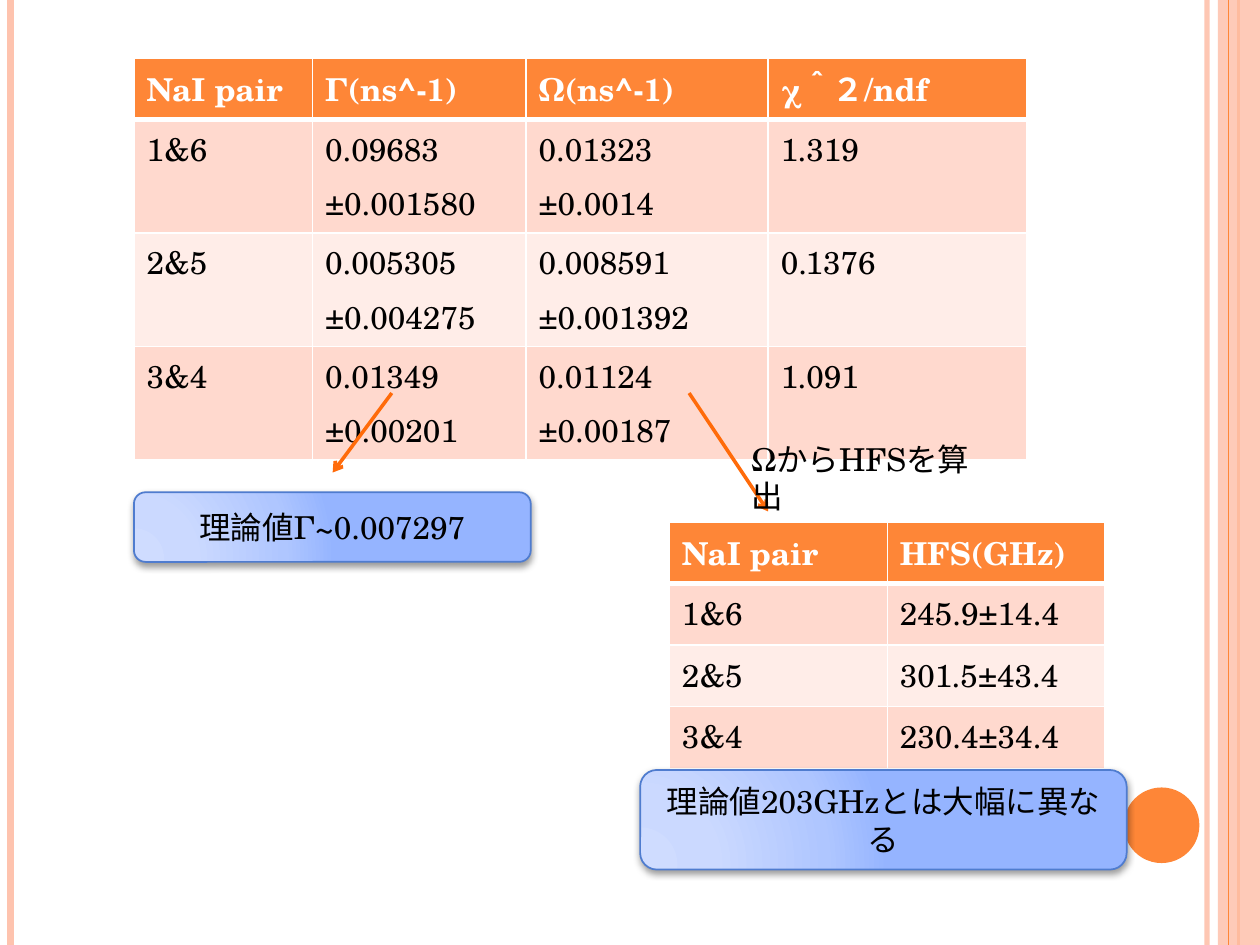
"""Build the slide of fitted decay parameters and the HFS values derived from them."""
from dataclasses import dataclass

from lxml import etree
from pptx import Presentation
from pptx import util as u
from pptx.dml.color import RGBColor
from pptx.enum import shapes, text
from pptx.oxml import parse_xml
from pptx.oxml.ns import qn

Pt = u.Pt
FONT = "TeX Gyre Schola"
NAMESPACE = "http://schemas.openxmlformats.org/drawingml/2006/main"
COLORS = {
    "orange": "FE8637", "peach": "FEC3AE", "arrow": "FF6B0A", "band": "FFD9CE",
    "pale": "FFEDE8", "white": "FFFFFF", "black": "000000", "outline": "4F7CCF",
}
GLOW_STOPS = {0: "CFDCFF", 30: "CBD9FF", 75: "AFC6FF", 100: "95B4FF"}
WIDTH, HEIGHT = 720, 540


@dataclass
class Box:
    left: float
    top: float
    width: float
    height: float

    def lengths(self) -> list:
        return [Pt(value) for value in (self.left, self.top, self.width, self.height)]


@dataclass
class Line:
    start: tuple
    end: tuple
    color: str
    width: float
    arrow: bool = False
    opacity: int = 100


@dataclass
class Grid:
    left: float
    top: float
    columns: list
    heights: list
    rows: list


@dataclass
class Callout:
    box: Box
    words: str


def rgb(name: str) -> RGBColor:
    return RGBColor.from_string(COLORS[name])


def set_opacity(fill_parent, percent: int) -> None:
    color = next(fill_parent.iter(qn("a:srgbClr")))
    etree.SubElement(color, qn("a:alpha")).set("val", str(percent * 1000))


def format_paragraph(paragraph, color: str = "black", bold: bool = False) -> None:
    paragraph.font.name = FONT
    paragraph.font.size = Pt(18)
    paragraph.font.bold = bold
    paragraph.font.color.rgb = rgb(color)


def draw_line(slide, line: Line) -> None:
    ends = [Pt(value) for value in (*line.start, *line.end)]
    connector = slide.shapes.add_connector(shapes.MSO_CONNECTOR.STRAIGHT, *ends)
    connector.line.color.rgb = rgb(line.color)
    connector.line.width = Pt(line.width)
    outline = connector.line._get_or_add_ln()
    if line.opacity < 100:
        set_opacity(outline, line.opacity)
    if line.arrow:
        etree.SubElement(outline, qn("a:tailEnd")).set("type", "arrow")
    etree.SubElement(connector._element.spPr, qn("a:effectLst"))


def draw_shape(slide, kind, box: Box, color: str):
    shape = slide.shapes.add_shape(kind, *box.lengths())
    shape.shadow.inherit = False
    shape.fill.solid()
    shape.fill.fore_color.rgb = rgb(color)
    shape.line.fill.background()
    return shape


def set_borders(cell, top: float, bottom: float) -> None:
    properties = cell._tc.get_or_add_tcPr()
    widths = {"lnL": 1, "lnR": 1, "lnT": top, "lnB": bottom}
    for index, (side, width) in enumerate(widths.items()):
        properties.insert(index, parse_xml(
            f'<a:{side} xmlns:a="{NAMESPACE}" w="{Pt(width)}"><a:solidFill>'
            f'<a:srgbClr val="{COLORS["white"]}"/></a:solidFill></a:{side}>'))


def draw_table(slide, grid: Grid) -> None:
    box = Box(grid.left, grid.top, sum(grid.columns), sum(grid.heights))
    table = slide.shapes.add_table(
        len(grid.rows), len(grid.columns), *box.lengths()).table
    for column, width in zip(table.columns, grid.columns):
        column.width = Pt(width)
    for index, (row, height, values) in enumerate(zip(table.rows, grid.heights, grid.rows)):
        row.height = Pt(height)
        header = index == 0
        fill = "orange" if header else ("band" if index % 2 else "pale")
        for cell, value in zip(row.cells, values):
            cell.text = value
            cell.fill.solid()
            cell.fill.fore_color.rgb = rgb(fill)
            set_borders(cell, 3 if index == 1 else 1, 3 if header else 1)
            for paragraph in cell.text_frame.paragraphs:
                paragraph.space_before = Pt(4.8)
                format_paragraph(paragraph, "white" if header else "black", header)


def draw_callout(slide, callout: Callout) -> None:
    shape = draw_shape(slide, shapes.MSO_SHAPE.ROUNDED_RECTANGLE, callout.box, "white")
    shape.line.color.rgb = rgb("outline")
    shape.line.width = Pt(1)
    properties = shape._element.spPr
    stops = "".join(f'<a:gs pos="{place * 1000}"><a:srgbClr val="{color}"/></a:gs>'
                    for place, color in GLOW_STOPS.items())
    properties.replace(properties.find(qn("a:solidFill")), parse_xml(
        f'<a:gradFill xmlns:a="{NAMESPACE}"><a:gsLst>{stops}</a:gsLst><a:path path="circle">'
        '<a:fillToRect l="5000" t="100000" r="120000" b="10000"/></a:path></a:gradFill>'))
    properties.find(qn("a:effectLst")).append(parse_xml(
        f'<a:outerShdw xmlns:a="{NAMESPACE}" blurRad="{Pt(4)}" dist="{Pt(2)}" dir="5400000" '
        f'rotWithShape="0"><a:srgbClr val="{COLORS["black"]}"><a:alpha val="40000"/>'
        '</a:srgbClr></a:outerShdw>'))
    frame = shape.text_frame
    frame.text = callout.words
    frame.word_wrap = True
    frame.vertical_anchor = text.MSO_ANCHOR.MIDDLE
    frame.paragraphs[0].alignment = text.PP_ALIGN.CENTER
    format_paragraph(frame.paragraphs[0])


def draw_note(slide, box: Box, words: str) -> None:
    frame = slide.shapes.add_textbox(*box.lengths()).text_frame
    frame.word_wrap = True
    frame.text = words
    format_paragraph(frame.paragraphs[0])


def draw_frame(slide) -> None:
    def rule(x: float, color: str, width: float, opacity: int = 100) -> None:
        draw_line(slide, Line((x, 0), (x, HEIGHT), color, width, opacity=opacity))

    rule(689.8, "peach", 3, 93)
    rule(6, "peach", 4.5)
    rule(707.8, "orange", 1.5)
    band = draw_shape(slide, shapes.MSO_SHAPE.RECTANGLE, Box(696, 0, 24, HEIGHT), "peach")
    set_opacity(band._element.spPr, 87)
    rule(702, "orange", 0.75)
    draw_shape(slide, shapes.MSO_SHAPE.OVAL, Box(642.2, 450, 43.2, 43.2), "orange")


FIT_TABLE = Grid(76.6, 33.1, [102, 122, 138.4, 147.6], [34, 50, 50, 50], [
    ["NaI pair", "Γ(ns^-1)", "Ω(ns^-1)", "χ＾２/ndf"],
    ["1&6", "0.09683\n±0.001580", "0.01323\n±0.0014", "1.319"],
    ["2&5", "0.005305\n±0.004275", "0.008591\n±0.001392", "0.1376"],
    ["3&4", "0.01349\n±0.00201", "0.01124\n±0.00187", "1.091"],
])
HFS_TABLE = Grid(382.5, 298.4, [124.5, 124.5], [34, 35.2, 35.2, 35.2], [
    ["NaI pair", "HFS(GHz)"],
    ["1&6", "245.9±14.4"],
    ["2&5", "301.5±43.4"],
    ["3&4", "230.4±34.4"],
])


def main() -> None:
    presentation = Presentation()
    presentation.slide_width, presentation.slide_height = Pt(WIDTH), Pt(HEIGHT)
    slide = presentation.slides.add_slide(presentation.slide_layouts[6])
    draw_frame(slide)
    draw_table(slide, FIT_TABLE)
    draw_table(slide, HFS_TABLE)
    draw_line(slide, Line((393.8, 224.6), (439, 292.3), "arrow", 2, arrow=True))
    draw_note(slide, Box(422.6, 247.7, 150.5, 28.8), "ΩからHFSを算出")
    draw_callout(slide, Callout(Box(365.8, 440, 278, 56.9), "理論値203GHzとは大幅に異なる"))
    draw_line(slide, Line((223.9, 224.6), (190.1, 270), "arrow", 2, arrow=True))
    draw_callout(slide, Callout(Box(76.5, 281.3, 226.8, 39.8), "理論値Γ~0.007297"))
    presentation.save("out.pptx")


if __name__ == "__main__":
    main()
